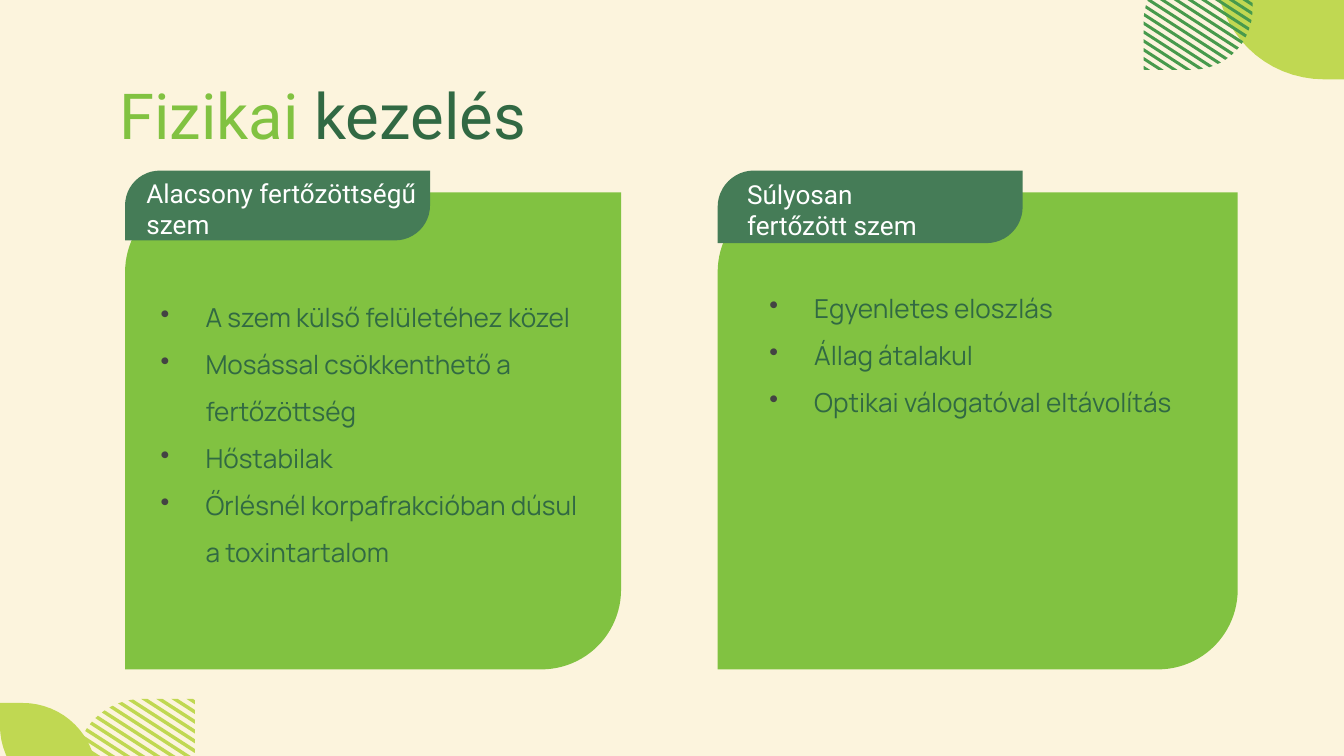
"""Build a slide that compares two levels of grain infection."""
import math

import lxml.etree
import pptx
import pptx.dml.color
import pptx.enum.shapes
import pptx.enum.text
import pptx.oxml.ns
import pptx.util

Pt = pptx.util.Pt
MID = pptx.enum.text.MSO_ANCHOR.MIDDLE
TOP = pptx.enum.text.MSO_ANCHOR.TOP
LIME, LEAF, FOREST = "C0D852", "81C241", "316943"


def tint(code):
    """Return the colour for a hex string."""
    return pptx.dml.color.RGBColor.from_string(code)


def paint(shape, code):
    """Give a shape a flat fill without line or shadow."""
    shape.shadow.inherit = False
    shape.fill.solid()
    shape.fill.fore_color.rgb = tint(code)
    shape.line.fill.background()


def trace(left, top, size, bend, flip=False):
    """List the points of a square leaf with two opposite round corners."""
    def arc(mid_x, mid_y, start):
        """List the points of a quarter circle."""
        turns = [math.radians(start + 90 * step / 16) for step in range(17)]
        return [(mid_x + bend * math.cos(turn), mid_y + bend * math.sin(turn))
                for turn in turns]

    points = [(0, size), *arc(bend, bend, 180),
              (size, 0), *arc(size - bend, size - bend, 0)]
    return [(left + (size - x if flip else x), top + y) for x, y in points]


def cut(points, side):
    """Keep the part of a polygon where side is not negative."""
    kept = []
    for (x1, y1), (x2, y2) in zip(points, points[1:] + points[:1]):
        here, there = side(x1, y1), side(x2, y2)
        if here >= 0:
            kept.append((x1, y1))
        if here * there < 0:
            part = here / (here - there)
            kept.append((x1 + part * (x2 - x1), y1 + part * (y2 - y1)))
    return kept


def draw(shapes, points, code):
    """Draw a filled polygon."""
    spots = [(Pt(x), Pt(y)) for x, y in points]
    pen = shapes.build_freeform(*spots[0], scale=1.0)
    pen.add_line_segments(spots[1:], close=True)
    paint(pen.convert_to_shape(), code)


def hatch(slide, left, top, size, bend, first, pitch, thick, count, code):
    """Draw a leaf made of slanted stripes."""
    group = slide.shapes.add_group_shape()
    whole = trace(left, top, size, bend)
    for row in range(count):
        edge = first + row * pitch

        def drop(x, y):
            """Measure how far a point lies below the stripe's upper edge."""
            return y - 0.645 * (x - left) - edge

        strip = cut(whole, drop)
        strip = cut(strip, lambda x, y: thick - drop(x, y))
        draw(group.shapes, strip, code)


def panel(slide, box, bend, code):
    """Add a block with two round corners."""
    kind = pptx.enum.shapes.MSO_SHAPE.ROUND_2_DIAG_RECTANGLE
    shape = slide.shapes.add_shape(kind, *map(Pt, box))
    shape.adjustments[0] = bend
    shape.adjustments[1] = 0
    paint(shape, code)


def frame(slide, box, anchor, head=7.2):
    """Add a wrapping text box and return its text frame."""
    text = slide.shapes.add_textbox(*map(Pt, box)).text_frame
    text.word_wrap = True
    text.vertical_anchor = anchor
    text.margin_left = text.margin_right = text.margin_bottom = Pt(7.2)
    text.margin_top = Pt(head)
    return text


def style(font, name, size, code):
    """Set the face, size and colour of a font."""
    font.name = name
    font.size = Pt(size)
    font.color.rgb = tint(code)


def fill(text, lines, name, code):
    """Write one paragraph per line and return the paragraphs."""
    for spot, line in enumerate(lines):
        para = text.add_paragraph() if spot else text.paragraphs[0]
        para.text = line
        style(para.font, name, 14, code)
    return text.paragraphs


def dot(para):
    """Give a paragraph a hanging bullet and wide lines."""
    para.line_spacing = 1.5
    props = para._p.get_or_add_pPr()
    props.set("marL", str(Pt(36)))
    props.set("indent", str(-Pt(24)))
    mark = pptx.oxml.ns.qn
    shade = lxml.etree.SubElement(props, mark("a:buClr"))
    lxml.etree.SubElement(shade, mark("a:srgbClr"), val="434343")
    lxml.etree.SubElement(props, mark("a:buChar"), char="•")


def title(slide, parts):
    """Write the title in its two colours."""
    para = frame(slide, (56.9, 42.5, 607, 37.4), MID).paragraphs[0]
    for words, code in parts:
        run = para.add_run()
        run.text = words
        style(run.font, "Roboto", 34, code)


def card(slide, left, width, high, label, place, items, spot, head):
    """Add a green card with a tab, its label and a bullet list."""
    panel(slide, (left, 103, width, 255.6), 0.167, LEAF)
    panel(slide, (left, 91.4, 163.4, high), 0.5, "457C57")
    fill(frame(slide, place, MID), label, "Roboto", "FFFFFF")
    text = frame(slide, (*spot, 251.3, 236.2), TOP, head)
    for para in fill(text, items, "Manrope", FOREST):
        dot(para)


def main():
    """Build and save the slide."""
    deck = pptx.Presentation()
    deck.slide_width, deck.slide_height = Pt(720), Pt(405)
    slide = deck.slides.add_slide(deck.slide_layouts[6])
    slide.background.fill.solid()
    slide.background.fill.fore_color.rgb = tint("FCF4DD")

    draw(slide.shapes, trace(651.6, -33.1, 75.6, 57.6, True), LIME)
    draw(slide.shapes, trace(0, 376.6, 51.8, 39.6, True), LIME)
    hatch(slide, 40.3, 374.4, 64.1, 36, 333.8, 5.22, 2.2, 14, LIME)
    hatch(slide, 612.7, -20.9, 58.3, 32.4, -36, 4.75, 1.9, 16, "479A4C")

    title(slide, [("Fizikai ", LEAF), ("kezelés", FOREST)])
    card(slide, 67, 265.7, 37.4,
         ["Alacsony fertőzöttségű szem"], (71.3, 99.4, 159.1, 24.5),
         ["A szem külső felületéhez közel",
          "Mosással csökkenthető a fertőzöttség",
          "Hőstabilak",
          "Őrlésnél korpafrakcióban dúsul a toxintartalom"],
         (67, 122.4), 30.7)
    card(slide, 384.5, 278.6, 38.9,
         ["Súlyosan", "fertőzött szem"], (393.1, 103, 159.1, 18.7),
         ["Egyenletes eloszlás",
          "Állag átalakul",
          "Optikai válogatóval eltávolítás"],
         (393.1, 112.3), 36)
    deck.save("out.pptx")


if __name__ == "__main__":
    main()
